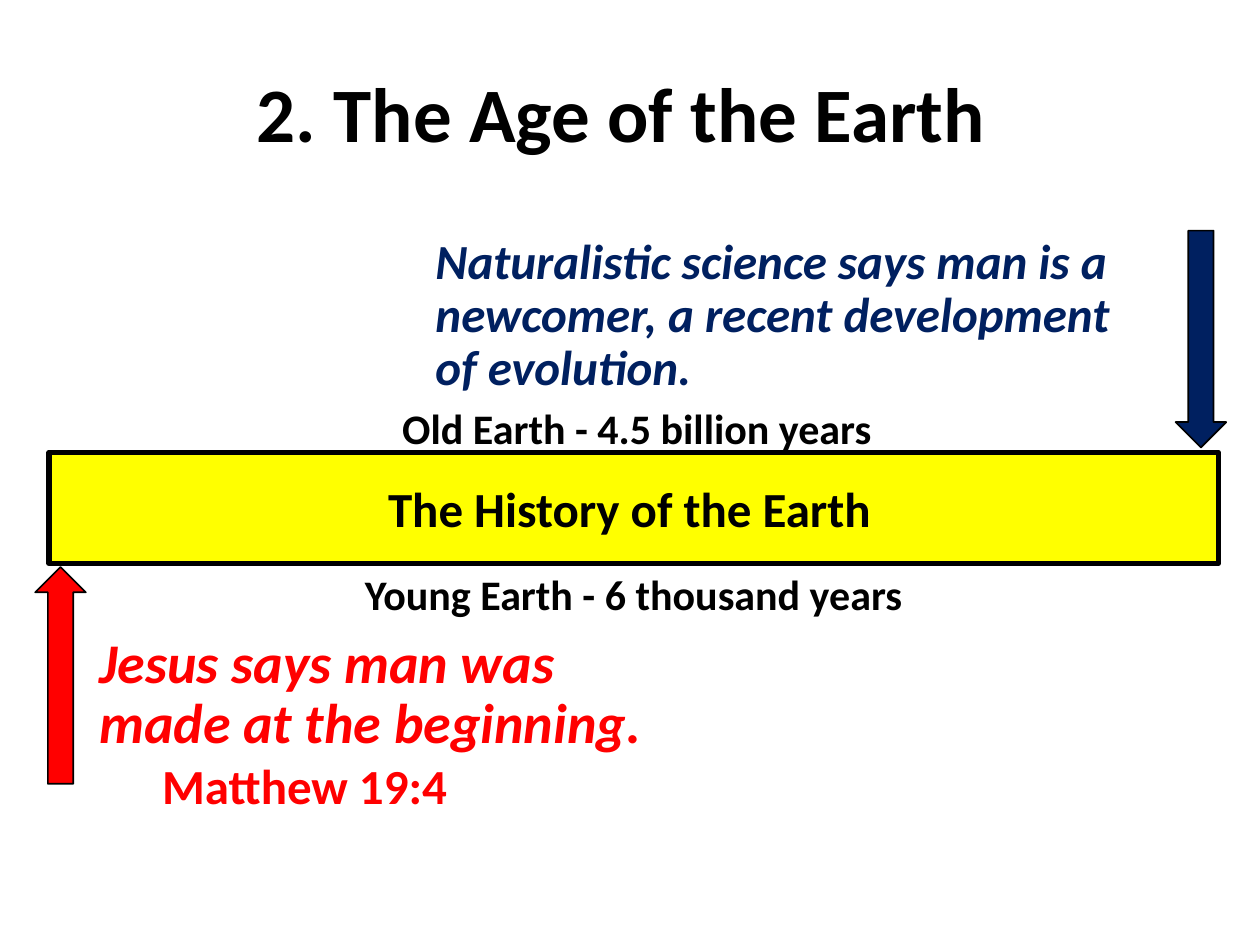
from pptx import Presentation
from pptx.dml.color import RGBColor
from pptx.enum.shapes import MSO_SHAPE
from pptx.enum.text import MSO_ANCHOR, MSO_AUTO_SIZE, PP_ALIGN
from pptx.util import Cm, Pt

BLACK = RGBColor(0, 0, 0)
NAVY = RGBColor(0x00, 0x20, 0x60)
RED = RGBColor(0xFF, 0, 0)
YELLOW = RGBColor(0xFF, 0xFF, 0)

FONT = "Calibri"
TITLE_ONLY = 5
CENTER, LEFT = PP_ALIGN.CENTER, PP_ALIGN.LEFT
MIDDLE = MSO_ANCHOR.MIDDLE
RECT, DOWN_ARROW = MSO_SHAPE.RECTANGLE, MSO_SHAPE.DOWN_ARROW


def add_run(p, text, size, color=BLACK, italic=False):
    r = p.add_run()
    r.text = text
    r.font.name = FONT
    r.font.size = Pt(size)
    r.font.bold = True
    r.font.italic = italic
    r.font.color.rgb = color


def add_title(s, text):
    sp = s.shapes.title
    sp.left, sp.top, sp.width, sp.height = Cm(1.75), Cm(1.02), Cm(21.9), Cm(2.69)
    tf = sp.text_frame
    tf.auto_size = MSO_AUTO_SIZE.NONE
    tf.vertical_anchor = MIDDLE
    p = tf.paragraphs[0]
    p.alignment = CENTER
    p.line_spacing = 0.9
    add_run(p, text, 44)


def add_text(s, x, y, w, h, align=LEFT, spacing=1.0):
    """Add a wrapping text box and return its first paragraph."""
    tf = s.shapes.add_textbox(Cm(x), Cm(y), Cm(w), Cm(h)).text_frame
    tf.word_wrap = True
    p = tf.paragraphs[0]
    p.alignment = align
    p.line_spacing = spacing
    return p


def add_label(s, x, y, w, h, text, size):
    add_run(add_text(s, x, y, w, h, CENTER), text, size)


def add_block(s, kind, x, y, w, h, fill, line_width, rotation=0):
    sp = s.shapes.add_shape(kind, Cm(x), Cm(y), Cm(w), Cm(h))
    sp.shadow.inherit = False
    sp.fill.solid()
    sp.fill.fore_color.rgb = fill
    sp.line.color.rgb = BLACK
    sp.line.width = Pt(line_width)
    sp.rotation = rotation


def main():
    prs = Presentation()
    prs.slide_width, prs.slide_height = Cm(25.4), Cm(19.05)
    s = prs.slides.add_slide(prs.slide_layouts[TITLE_ONLY])
    add_title(s, "2. The Age of the Earth ")

    # Naturalistic view, above the timeline
    p = add_text(s, 8.53, 4.65, 15.11, 4.04, spacing=0.9)
    add_run(p, "Naturalistic science says man is a newcomer, "
               "a recent development of evolution.", 28, NAVY, True)

    # Timeline bar
    add_block(s, RECT, 0.99, 9.12, 23.57, 2.24, YELLOW, 3)
    add_label(s, 7.11, 9.53, 11.15, 1.45, "The History of the Earth", 28)

    # Biblical view, below the timeline
    p = add_text(s, 1.75, 12.67, 12.12, 4.37, spacing=0.9)
    add_run(p, "Jesus says man was made at the beginning. ", 32, RED, True)
    p.add_line_break()
    add_run(p, "\t", 32, RED, True)
    add_run(p, "Matthew 19:4", 28, RED)

    # Arrows at the two ends of the timeline
    add_block(s, DOWN_ARROW, 23.7, 4.65, 1.02, 4.37, NAVY, 1)
    add_block(s, DOWN_ARROW, 0.71, 11.43, 1.02, 4.37, RED, 1, 180)

    # Age labels
    add_label(s, 5, 7.98, 15.49, 1.27, " Old Earth - 4.5 billion years", 24)
    add_label(s, 5.03, 11.33, 15.49, 1.27, "Young Earth - 6 thousand years", 24)

    prs.save("out.pptx")


if __name__ == "__main__":
    main()
